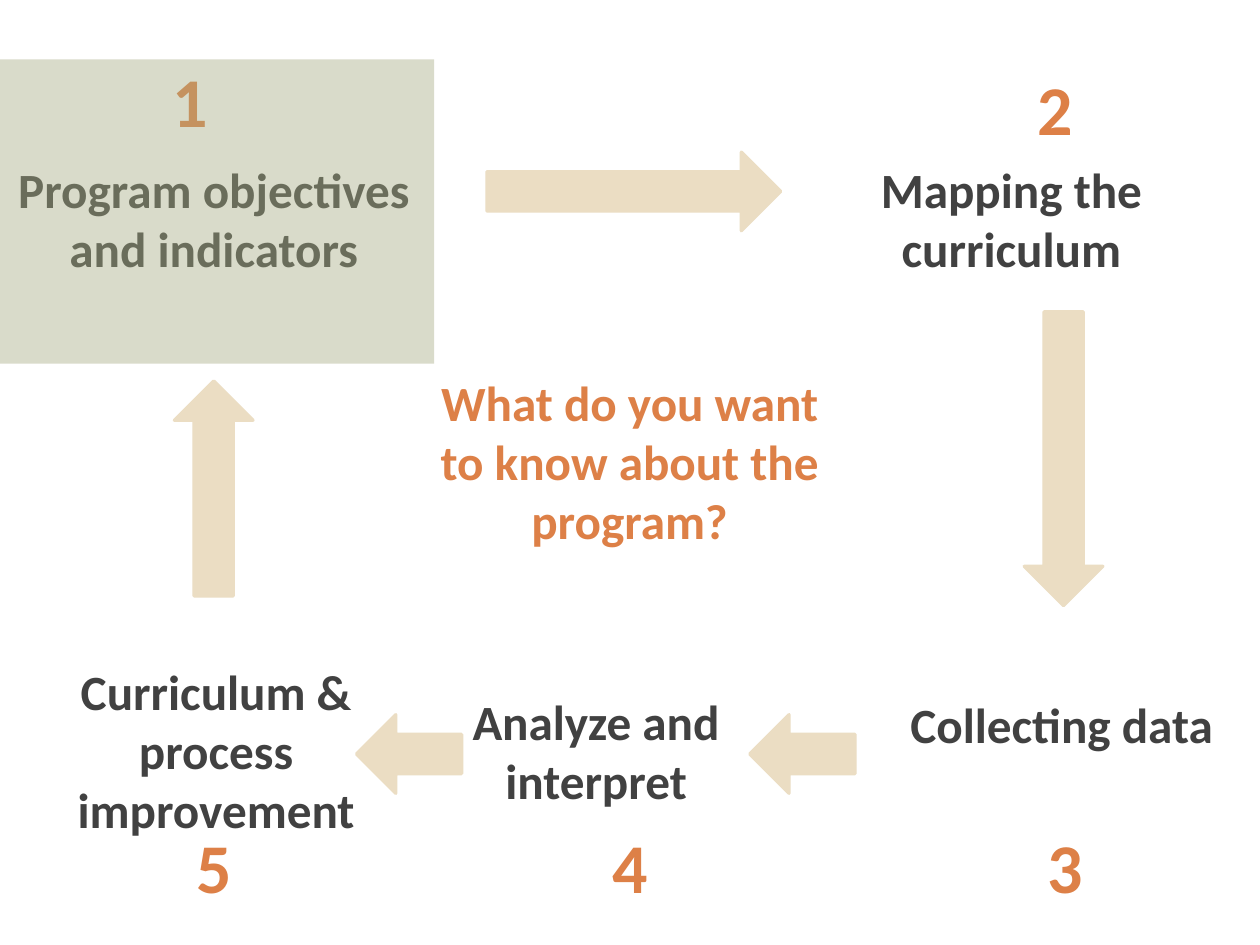
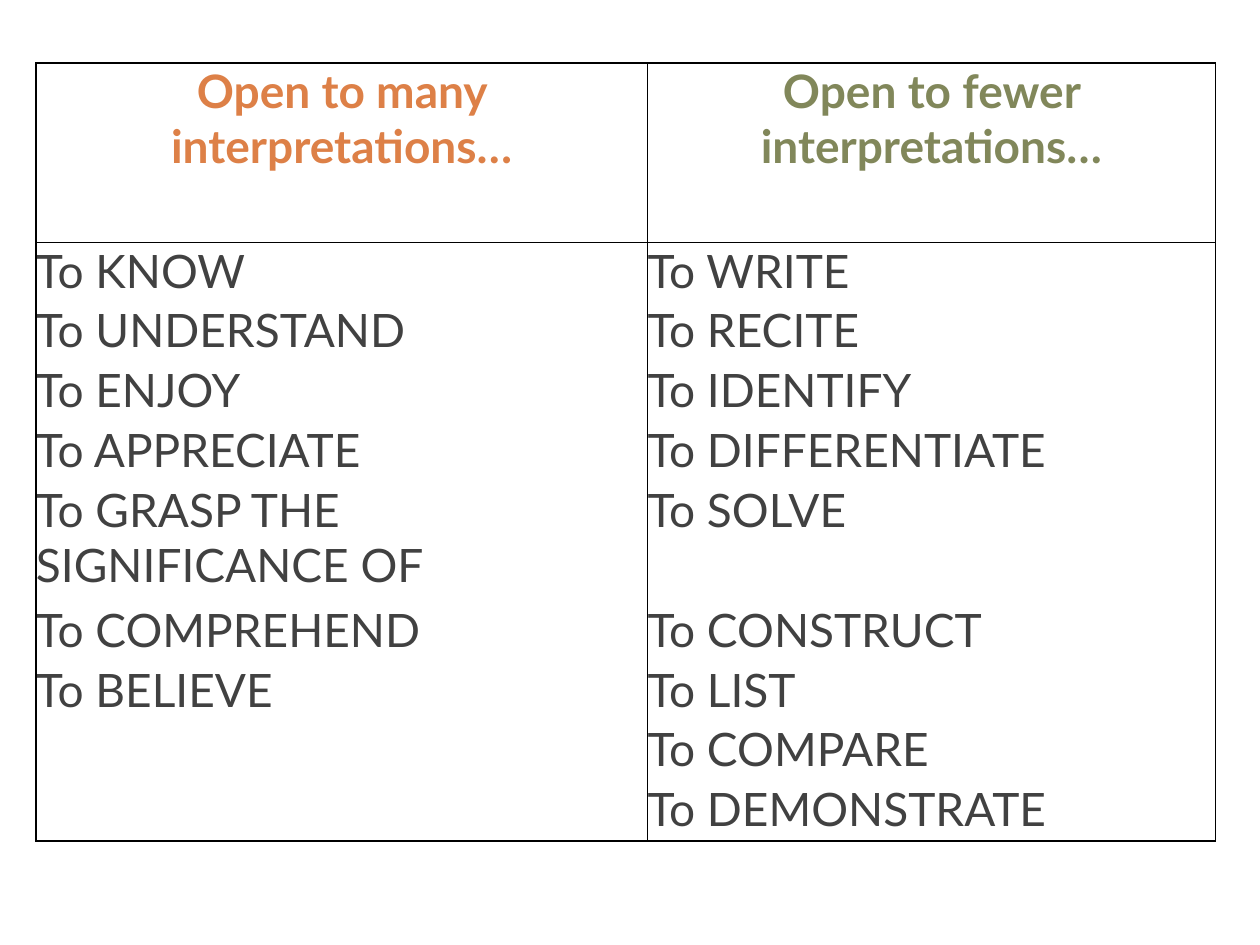
from dataclasses import dataclass
from itertools import zip_longest
from typing import Any

from lxml.etree import SubElement
from pptx import Presentation
from pptx.dml.color import RGBColor
from pptx.enum.shapes import MSO_SHAPE as Shape
from pptx.enum.text import PP_ALIGN as Align
from pptx.oxml.ns import qn
from pptx.util import Cm, Pt

ACCENT, OLIVE, SAGE, SAND = "DD8047", "81875A", "A5AB81", "EBDDC3"
INK, PAPER, RULE = "414141", "FFFFFF", "000000"
BODY_FONT, TABLE_FONT = "Calibri", "Lato"
LABEL_SIZE, NUMBER_SIZE, TABLE_SIZE = 31, 44, 29


def rgb(value):
    """Turn a hex string into a colour."""
    return RGBColor.from_string(value)


@dataclass
class Deck:
    """Hold the presentation, its style and the current slide."""

    prs: Any
    slide: Any = None

    def new_slide(self):
        """Start a blank slide."""
        self.slide = self.prs.slides.add_slide(self.prs.slide_layouts[6])

    def set_text(self, paragraph, text, font, size, color, bold, align):
        """Fill a paragraph with text in one style."""
        paragraph.text = text
        paragraph.alignment = align
        paragraph.font.name = font
        paragraph.font.size = Pt(size)
        paragraph.font.bold = bold
        paragraph.font.color.rgb = rgb(color)

    def label(self, box, text, color=INK, size=LABEL_SIZE, wrap=True):
        """Add a bold centred text box."""
        frame = self.slide.shapes.add_textbox(*map(Cm, box)).text_frame
        frame.word_wrap = wrap
        frame.margin_left = frame.margin_right = Cm(0.28)
        frame.margin_top = frame.margin_bottom = Cm(0.15)
        self.set_text(frame.paragraphs[0], text, BODY_FONT, size, color, True, Align.CENTER)

    def number(self, left, top, text):
        """Add a large step number."""
        self.label((left, top, 1.45, 2.16), text, ACCENT, NUMBER_SIZE, wrap=False)

    def block(self, kind, box, color):
        """Add a filled shape without an outline."""
        shape = self.slide.shapes.add_shape(kind, *map(Cm, box))
        shape.shadow.inherit = False
        shape.fill.solid()
        shape.fill.fore_color.rgb = rgb(color)
        shape.line.fill.background()
        return shape

    def arrow(self, left, top, length, rotation):
        """Add a block arrow turned by the given angle."""
        arrow = self.block(Shape.RIGHT_ARROW, (left, top, length, 1.75), SAND)
        arrow.line.color.rgb = rgb(SAND)
        arrow.line.width = Pt(2)
        arrow.rotation = rotation

    def veil(self, box, opacity):
        """Add a see-through rectangle, with opacity in percent."""
        veil = self.block(Shape.RECTANGLE, box, SAGE)
        color = veil.element.spPr.find(qn("a:solidFill")).find(qn("a:srgbClr"))
        SubElement(color, qn("a:alpha"), val=str(opacity * 1000))

    def borders(self, cell, sides):
        """Rule the named sides of a cell and clear the others."""
        props = cell._tc.get_or_add_tcPr()
        for side in "LRTB":
            line = SubElement(props, qn(f"a:ln{side}"), w=str(Pt(1)))
            if side in sides:
                fill = SubElement(line, qn("a:solidFill"))
                SubElement(fill, qn("a:srgbClr"), val=RULE)
            else:
                SubElement(line, qn("a:noFill"))

    def table(self, left, top, widths, heights, headers, rows):
        """Add a table with coloured headers and ruled columns."""
        frame = self.slide.shapes.add_table(
            len(heights), len(widths), Cm(left), Cm(top), Cm(sum(widths)), Cm(sum(heights)))
        table = frame.table
        table.first_row = table.horz_banding = False
        for column, width in zip(table.columns, widths):
            column.width = Cm(width)
        for row, height in zip(table.rows, heights):
            row.height = Cm(height)
        last = len(heights) - 1
        for r, texts in enumerate([[text for text, _ in headers], *rows]):
            sides = "LR" + ("T" if r < 2 else "") + ("B" if r in (0, last) else "")
            for c, text in enumerate(texts):
                cell = table.cell(r, c)
                cell.margin_left = cell.margin_right = 0
                cell.margin_top = cell.margin_bottom = 0
                self.borders(cell, sides)
                cell.fill.solid()
                cell.fill.fore_color.rgb = rgb(PAPER)
                color, align = (headers[c][1], Align.CENTER) if r == 0 else (INK, Align.LEFT)
                self.set_text(cell.text_frame.paragraphs[0], text, TABLE_FONT,
                              TABLE_SIZE, color, r == 0, align)


def cycle_slide(deck):
    """Show the five steps of program review as a cycle."""
    deck.new_slide()
    steps = [
        ((-0.15, 3.38, 9.8, 4.27), "Program objectives and indicators"),
        ((18.26, 3.38, 8.43, 2.92), "Mapping the curriculum"),
        ((18.69, 15.27, 9.8, 1.6), "Collecting data"),
        ((9.65, 15.21, 7.19, 2.92), "Analyze and interpret"),
        ((1.04, 14.55, 7.52, 4.24), "Curriculum & process improvement"),
    ]
    for box, text in steps:
        deck.label(box, text)
    arrows = [
        (10.82, 3.38, 6.53, 0),
        (2.36, 9.98, 4.78, 270),
        (20.37, 9.32, 6.53, 90),
        (16.66, 15.88, 2.34, 180),
        (7.92, 15.88, 2.34, 180),
    ]
    for arrow in arrows:
        deck.arrow(*arrow)
    deck.label((9.09, 8.13, 9.8, 5.59), "What do you want to know about the program?", ACCENT)
    corners = [(3.51, 1.14), (22.73, 1.32), (22.94, 18.16), (13.28, 18.16), (4.04, 18.16)]
    for step, (left, top) in enumerate(corners, 1):
        deck.number(left, top, str(step))
    deck.veil((-0.08, 1.32, 9.73, 6.76), 42)


def verbs_slide(deck):
    """Compare vague verbs with precise ones."""
    deck.new_slide()
    vague = ["KNOW", "UNDERSTAND", "ENJOY", "APPRECIATE", "GRASP THE SIGNIFICANCE OF",
             "COMPREHEND", "BELIEVE"]
    precise = ["WRITE", "RECITE", "IDENTIFY", "DIFFERENTIATE", "SOLVE", "CONSTRUCT",
               "LIST", "COMPARE", "DEMONSTRATE"]
    rows = [[f"To {verb}" if verb else "" for verb in pair]
            for pair in zip_longest(vague, precise)]
    line = 1.33
    heights = [3 * line, *[line] * 4, 2 * line, *[line] * 4]
    headers = [("Open to many interpretations…", ACCENT),
               ("Open to fewer interpretations…", OLIVE)]
    deck.table(0.8, 1.4, [13.59, 12.62], heights, headers, rows)


def main():
    """Build and save the presentation."""
    prs = Presentation()
    prs.slide_width, prs.slide_height = Cm(28), Cm(21)
    deck = Deck(prs)
    cycle_slide(deck)
    verbs_slide(deck)
    prs.save("out.pptx")


if __name__ == "__main__":
    main()
